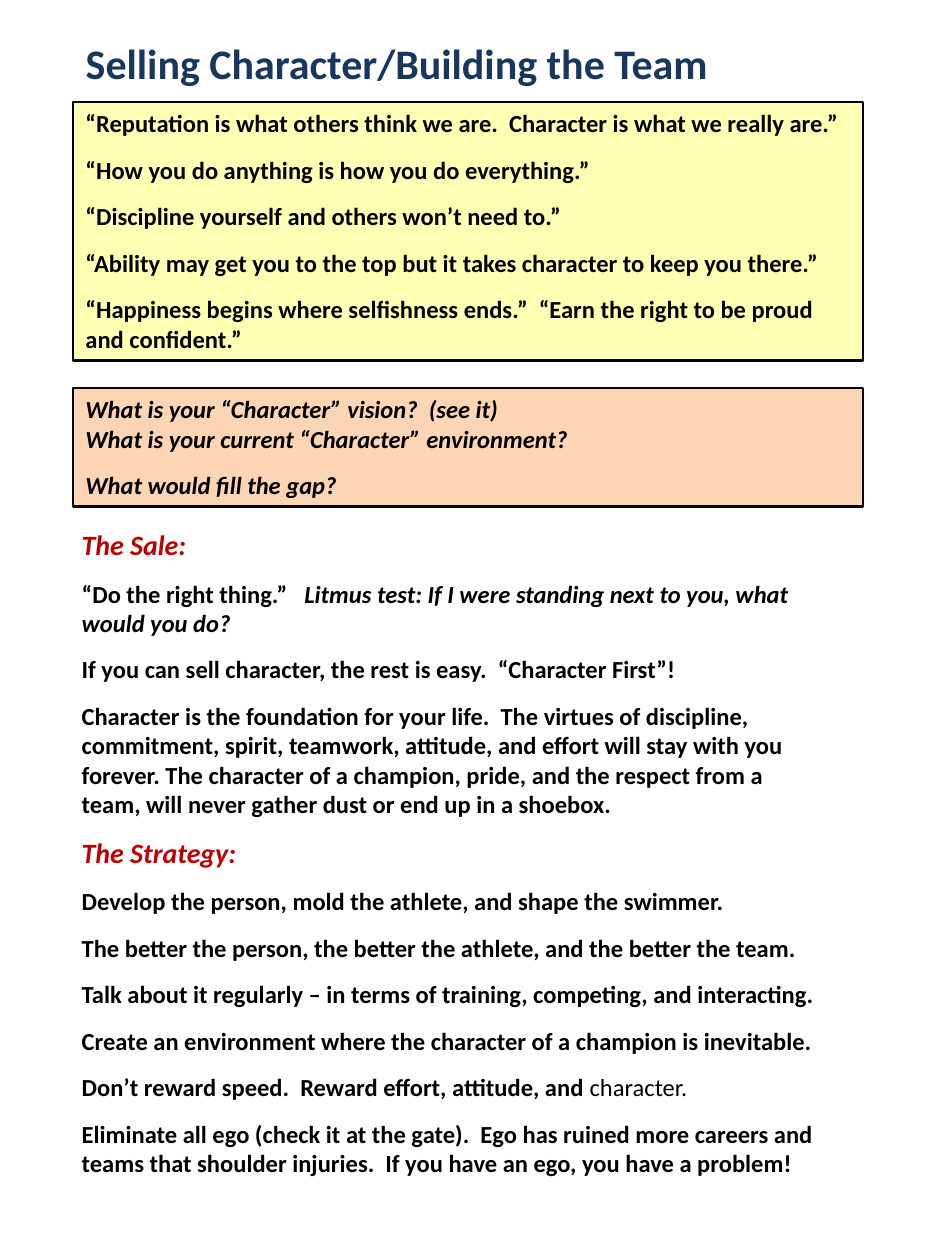
from pptx import Presentation
from pptx.dml.color import RGBColor
from pptx.enum import shapes, text
from pptx.util import Inches, Pt

FONT = "Calibri"
BLACK, NAVY, RED = "000000", "17375E", "C00000"
YELLOW, PEACH = "FFFFB3", "FCD5B5"
GAP = 9.75  # points between separated paragraphs

QUOTES = [
    "“Reputation is what others think we are.  Character is what we really are.”",
    "“How you do anything is how you do everything.”",
    "“Discipline yourself and others won’t need to.”",
    "“Ability may get you to the top but it takes character to keep you there.”",
    "“Happiness begins where selfishness ends.”  “Earn the right to be proud "
    "and confident.”",
]
QUESTIONS = [
    "What is your “Character” vision?  (see it)",
    "What is your current “Character” environment?",
    "What would fill the gap?",
]
# Each section: heading, then paragraphs of (text, differing style) runs
SECTIONS = [
    ("The Sale:", [
        [("“Do the right thing.”   ", {}),
         ("Litmus test: If I were standing next to you, what would you do?",
          {"italic": True})],
        [("If you can sell character, the rest is easy.  “Character First”!", {})],
        [("Character is the foundation for your life.  The virtues of discipline, "
          "commitment, spirit, teamwork, attitude, and effort will stay with you "
          "forever. The character of a champion, pride, and the respect from a "
          "team, will never gather dust or end up in a shoebox.", {})],
    ]),
    ("The Strategy:", [
        [("Develop the person, mold the athlete, and shape the swimmer.", {})],
        [("The better the person, the better the athlete, and the better the team.",
          {})],
        [("Talk about it regularly – in terms of training, competing, and "
          "interacting.", {})],
        [("Create an environment where the character of a champion is inevitable.",
          {})],
        [("Don’t reward speed.  Reward effort, attitude, and ", {}),
         ("character.", {"bold": False})],
        [("Eliminate all ego (check it at the gate).  Ego has ruined more careers "
          "and teams that shoulder injuries.  If you have an ego, you have a "
          "problem!", {})],
    ]),
]


def rgb(value):
    return RGBColor.from_string(value)


def style(r, size=14, color=BLACK, bold=True, italic=False):
    f = r.font
    f.name, f.size, f.bold, f.italic = FONT, Pt(size), bold, italic
    f.color.rgb = rgb(color)


def prepare(sp):
    """Wrap text, and start it at the top of the shape."""
    tf = sp.text_frame
    tf.word_wrap = True
    tf.auto_size = text.MSO_AUTO_SIZE.NONE
    tf.vertical_anchor = text.MSO_ANCHOR.TOP
    return tf


def add_paragraph(tf, runs, before=GAP):
    first = len(tf.paragraphs) == 1 and not tf.text
    p = tf.paragraphs[0] if first else tf.add_paragraph()
    p.alignment = text.PP_ALIGN.LEFT
    p.space_before = Pt(0 if first else before)
    for words, look in runs:
        r = p.add_run()
        r.text = words
        style(r, **look)


def add_title(s, words):
    sp = s.shapes.title
    sp.left, sp.top = Inches(0.58), Inches(0.25)
    sp.width, sp.height = Inches(5.62), Inches(0.5)
    add_paragraph(prepare(sp), [(words, {"size": 24, "color": NAVY})])


def add_panel(s, top, height, fill):
    sp = s.shapes.add_shape(shapes.MSO_SHAPE.RECTANGLE, Inches(0.58), Inches(top),
                            Inches(6.27), Inches(height))
    sp.shadow.inherit = False
    sp.fill.solid()
    sp.fill.fore_color.rgb = rgb(fill)
    sp.line.color.rgb = rgb(BLACK)
    sp.line.width = Pt(1.5)
    return prepare(sp)


def add_sections(s):
    sp = s.shapes.add_textbox(Inches(0.55), Inches(4.14), Inches(6.1), Inches(5.45))
    tf = prepare(sp)
    for heading, paragraphs in SECTIONS:
        add_paragraph(tf, [(heading, {"size": 16, "color": RED, "italic": True})])
        for runs in paragraphs:
            add_paragraph(tf, runs)


def main():
    prs = Presentation()
    prs.slide_width, prs.slide_height = Inches(7.5), Inches(10)
    s = prs.slides.add_slide(prs.slide_layouts[5])
    add_title(s, "Selling Character/Building the Team")

    # Quotations
    tf = add_panel(s, 0.81, 2.05, YELLOW)
    for quote in QUOTES:
        add_paragraph(tf, [(quote, {})])

    # Questions: the first two stand together
    tf = add_panel(s, 3.08, 0.94, PEACH)
    for question, before in zip(QUESTIONS, (0, 0, GAP)):
        add_paragraph(tf, [(question, {"italic": True})], before)

    # Sale and strategy
    add_sections(s)
    prs.save("out.pptx")


if __name__ == "__main__":
    main()
